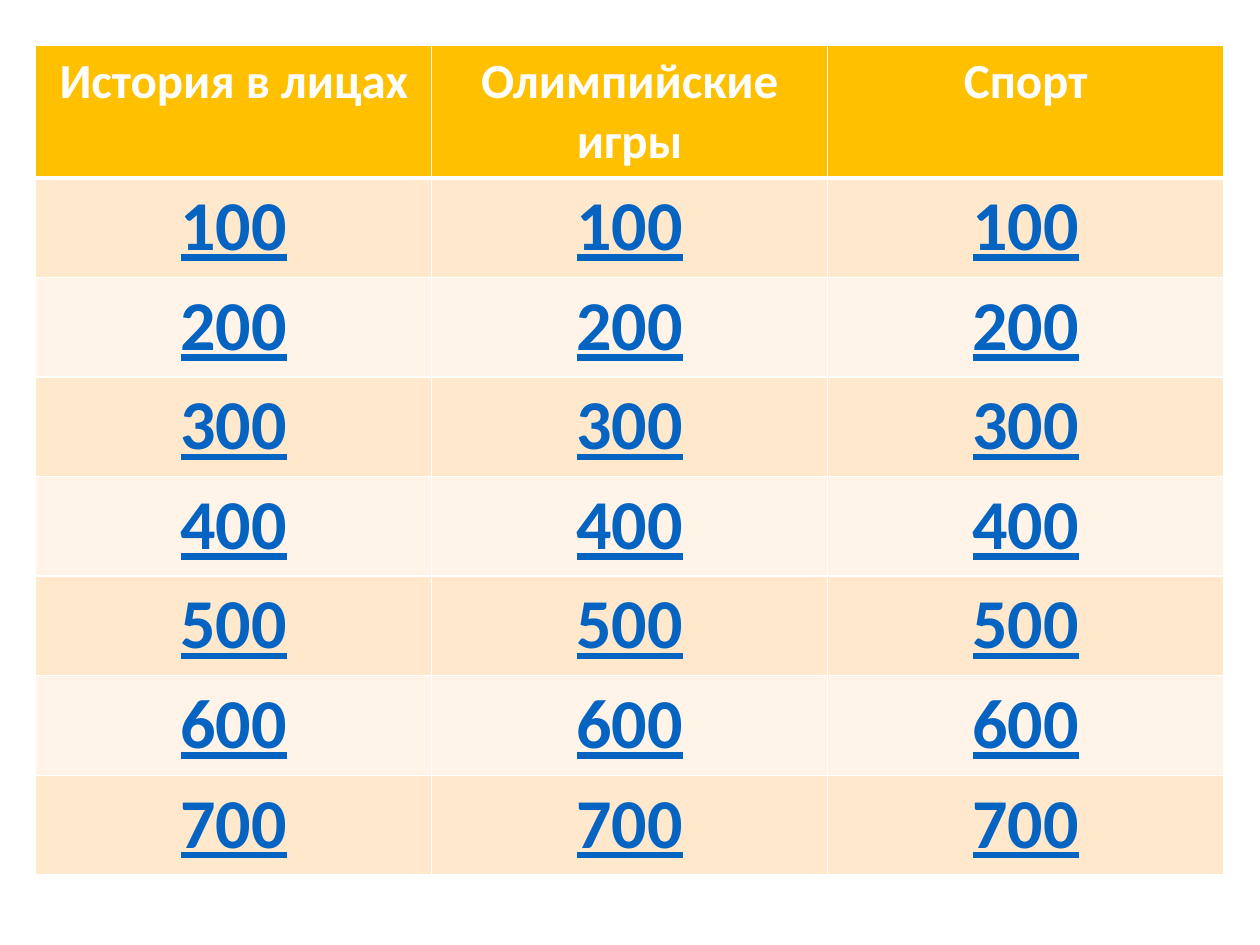
from lxml.etree import SubElement
from pptx import Presentation
from pptx.dml.color import RGBColor
from pptx.enum.text import PP_ALIGN
from pptx.oxml.ns import qn
from pptx.util import Pt

COLORS = {
    "white": "FFFFFF",
    "header": "FFC000",
    "odd_row": "FFE8CC",
    "even_row": "FFF4E7",
    "score": "0563C1",
}
CATEGORIES = ["История в лицах", "Олимпийские игры", "Спорт"]
SCORES = range(100, 800, 100)
COLUMN_WIDTH = 226.3
HEADER_HEIGHT = 73.5
SCORE_HEIGHT = 56.9


def color(name):
    return RGBColor.from_string(COLORS[name])


def set_borders(cell, top, bottom):
    """Draw white cell borders; top and bottom are widths in points."""
    properties = cell._tc.get_or_add_tcPr()
    for tag, width in (("a:lnL", 1), ("a:lnR", 1), ("a:lnT", top), ("a:lnB", bottom)):
        line = SubElement(properties, qn(tag), w=str(Pt(width)))
        fill = SubElement(line, qn("a:solidFill"))
        SubElement(fill, qn("a:srgbClr"), val=COLORS["white"])


def fill_cell(cell, text, size, text_color, background, underline=False):
    cell.fill.solid()
    cell.fill.fore_color.rgb = color(background)
    paragraph = cell.text_frame.paragraphs[0]
    paragraph.text = text
    paragraph.alignment = PP_ALIGN.CENTER
    font = paragraph.runs[0].font
    font.name = "Calibri"
    font.size = Pt(size)
    font.bold = True
    font.underline = underline
    font.color.rgb = color(text_color)


def add_game_board(slide):
    row_count = len(SCORES) + 1
    column_count = len(CATEGORIES)
    table = slide.shapes.add_table(
        row_count, column_count, Pt(20.4), Pt(26),
        Pt(COLUMN_WIDTH * column_count),
        Pt(HEADER_HEIGHT + SCORE_HEIGHT * len(SCORES)),
    ).table
    for row_index, row in enumerate(table.rows):
        row.height = Pt(SCORE_HEIGHT if row_index else HEADER_HEIGHT)
    for column_index, category in enumerate(CATEGORIES):
        table.columns[column_index].width = Pt(COLUMN_WIDTH)
        header = table.cell(0, column_index)
        set_borders(header, top=1, bottom=3)
        fill_cell(header, category, 28, "white", "header")
        for row_index, score in enumerate(SCORES, start=1):
            cell = table.cell(row_index, column_index)
            set_borders(cell, top=3 if row_index == 1 else 1, bottom=1)
            background = "odd_row" if row_index % 2 else "even_row"
            fill_cell(cell, str(score), 40, "score", background, underline=True)


def main():
    presentation = Presentation()
    presentation.slide_width = Pt(720)
    presentation.slide_height = Pt(540)
    slide = presentation.slides.add_slide(presentation.slide_layouts[6])
    add_game_board(slide)
    presentation.save("out.pptx")


if __name__ == "__main__":
    main()
